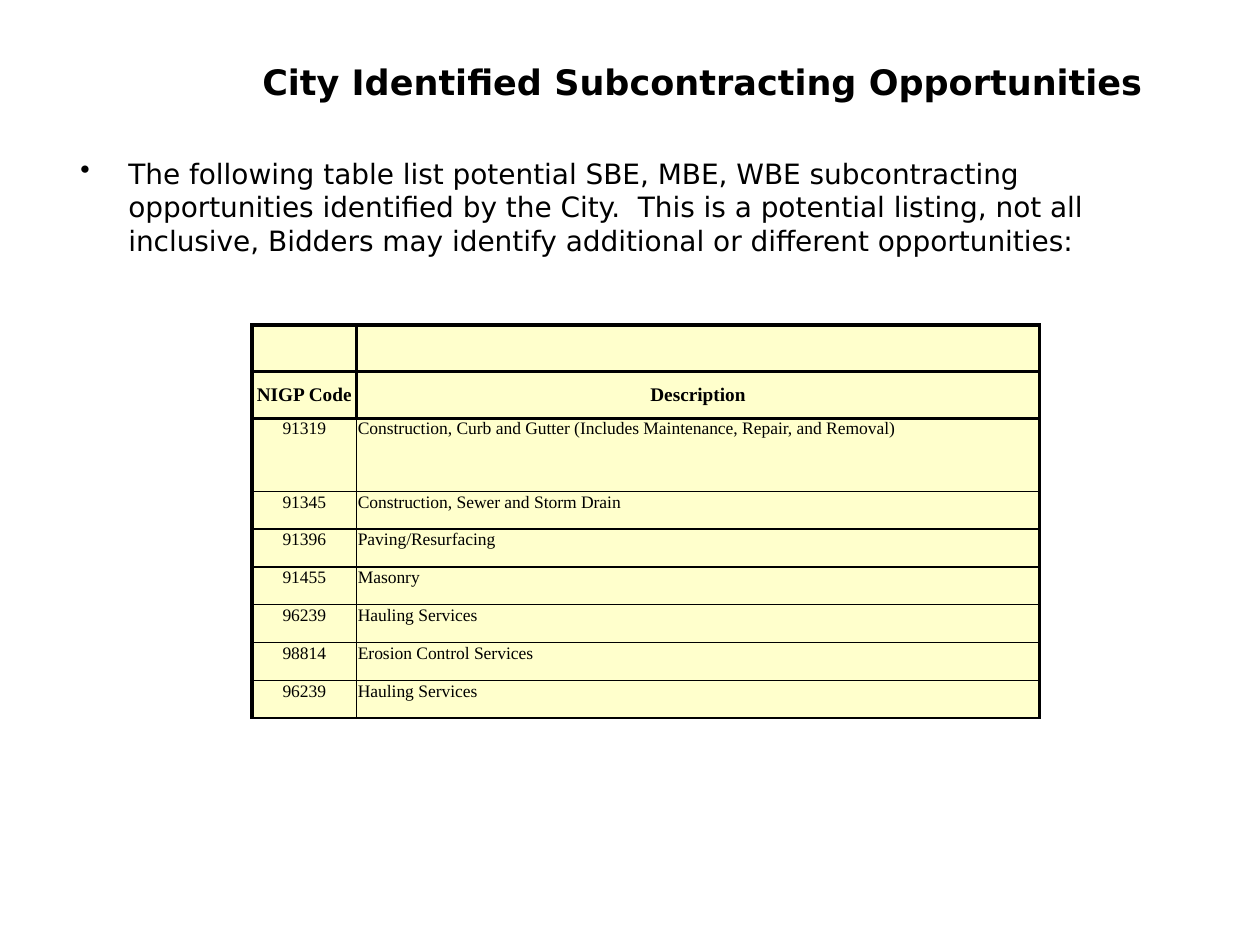
from lxml import etree
from pptx import Presentation
from pptx.dml.color import RGBColor
from pptx.enum.text import MSO_ANCHOR, MSO_AUTO_SIZE, PP_ALIGN
from pptx.oxml.ns import qn
from pptx.util import Inches, Pt

CENTER, LEFT = PP_ALIGN.CENTER, PP_ALIGN.LEFT
MIDDLE, TOP = MSO_ANCHOR.MIDDLE, MSO_ANCHOR.TOP
GROW = MSO_AUTO_SIZE.SHAPE_TO_FIT_TEXT
BLACK = RGBColor(0x00, 0x00, 0x00)
CREAM = RGBColor(0xFF, 0xFF, 0xCC)
SANS, SERIF = "DejaVu Sans", "Times New Roman"
THICK, THIN = 2.25, 1

# Content
TITLE = "City Identified Subcontracting Opportunities "
INTRO = (
    "The following table list potential SBE, MBE, WBE subcontracting "
    "opportunities identified by the City.  This is a potential listing, not all "
    "inclusive, Bidders may identify additional or different opportunities:"
)
ROWS = [
    ("", ""),
    ("NIGP Code", "Description"),
    ("91319", "Construction, Curb and Gutter (Includes Maintenance, Repair, and Removal)"),
    ("91345", "Construction, Sewer and Storm Drain"),
    ("91396", "Paving/Resurfacing"),
    ("91455", "Masonry"),
    ("96239", "Hauling Services"),
    ("98814", "Erosion Control Services"),
    ("96239", "Hauling Services"),
]
HEADER_ROWS = 2
COLUMN_WIDTHS = [0.83, 5.42]
ROW_HEIGHTS = [0.37, 0.37, 0.58] + [0.3] * 6

# Formats
TITLE_FONT = {"name": SANS, "size": Pt(20), "bold": True}
INTRO_FONT = {"name": SANS, "size": Pt(16), "bold": False}
HEADER_FONT = {"name": SERIF, "size": Pt(11), "bold": True}
ENTRY_FONT = {"name": SERIF, "size": Pt(10), "bold": False}
HEADER_CELL = {"vertical_anchor": MIDDLE, "margin_left": 0, "margin_top": 0,
               "margin_right": 0, "margin_bottom": 0}
ENTRY_CELL = {"vertical_anchor": TOP, "margin_left": Inches(0.01),
              "margin_top": Inches(0.01), "margin_right": Inches(0.01),
              "margin_bottom": 0}


def apply_format(target, values):
    for attribute, value in values.items():
        setattr(target, attribute, value)


def write(paragraph, text, font, alignment):
    paragraph.alignment = alignment
    if text:
        run = paragraph.add_run()
        run.text = text
        apply_format(run.font, font)
        run.font.color.rgb = BLACK


def set_borders(cell, widths):
    """Border lines come before the fill in the cell properties."""
    properties = cell._tc.get_or_add_tcPr()
    for position, (side, width) in enumerate(widths.items()):
        line = etree.Element(qn(f"a:ln{side}"), w=str(Pt(width)))
        fill = etree.SubElement(line, qn("a:solidFill"))
        etree.SubElement(fill, qn("a:srgbClr"), val=str(BLACK))
        properties.insert(position, line)


def add_title(slide):
    title = slide.shapes.title
    apply_format(title, {"left": Inches(1.75), "top": Inches(0.3),
                         "width": Inches(7.75), "height": Inches(0.7)})
    title.text_frame.vertical_anchor = MIDDLE
    write(title.text_frame.paragraphs[0], TITLE, TITLE_FONT, CENTER)


def add_intro(slide):
    intro = slide.shapes.add_textbox(
        Inches(0.54), Inches(1.19), Inches(8.92), Inches(0.91)).text_frame
    apply_format(intro, {"word_wrap": True, "auto_size": GROW})
    paragraph = intro.paragraphs[0]
    paragraph.space_after = Pt(6)
    properties = paragraph._p.get_or_add_pPr()
    properties.set("marL", str(Inches(0.38)))
    properties.set("indent", str(Inches(-0.38)))
    etree.SubElement(properties, qn("a:buChar"), char="•")
    write(paragraph, INTRO, INTRO_FONT, LEFT)


def add_code_table(slide):
    table = slide.shapes.add_table(
        len(ROWS), len(COLUMN_WIDTHS), Inches(2), Inches(2.58),
        Inches(sum(COLUMN_WIDTHS)), Inches(sum(ROW_HEIGHTS))).table
    for column, width in zip(table.columns, COLUMN_WIDTHS):
        column.width = Inches(width)
    for row, height in zip(table.rows, ROW_HEIGHTS):
        row.height = Inches(height)

    for r, texts in enumerate(ROWS):
        is_header = r < HEADER_ROWS
        for c, text in enumerate(texts):
            cell = table.cell(r, c)
            apply_format(cell, HEADER_CELL if is_header else ENTRY_CELL)
            cell.fill.solid()
            cell.fill.fore_color.rgb = CREAM
            # Thick lines frame the header cells and the table's sides
            set_borders(cell, {
                "L": THICK if is_header or c == 0 else THIN,
                "R": THICK if is_header or c == 1 else THIN,
                "T": THICK if r <= HEADER_ROWS else THIN,
                "B": THICK if is_header else THIN,
            })
            write(cell.text_frame.paragraphs[0], text,
                  HEADER_FONT if is_header else ENTRY_FONT,
                  CENTER if is_header or c == 0 else LEFT)


def main():
    deck = Presentation()
    deck.slide_width, deck.slide_height = Inches(10), Inches(7.5)
    slide = deck.slides.add_slide(deck.slide_layouts[5])
    add_title(slide)
    add_intro(slide)
    add_code_table(slide)
    deck.save("out.pptx")


if __name__ == "__main__":
    main()
